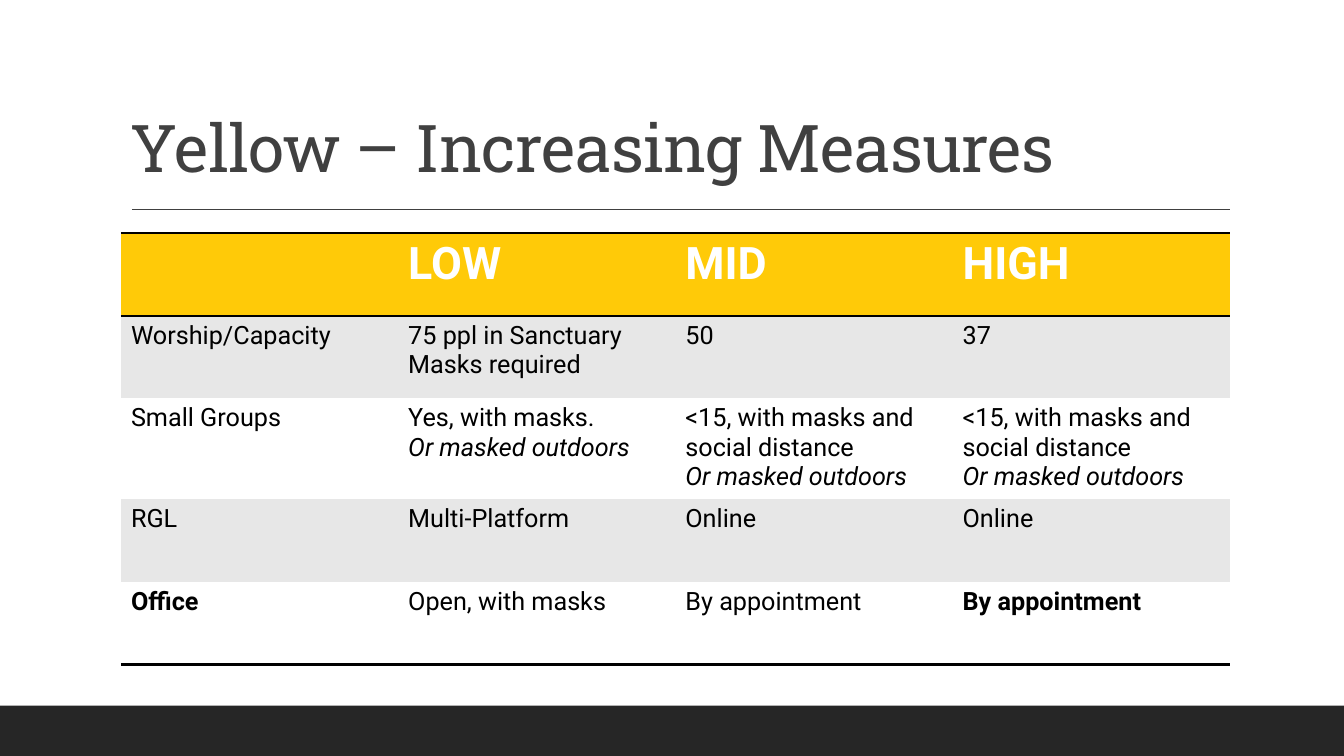
from dataclasses import dataclass

from lxml.etree import SubElement
from pptx import Presentation
from pptx.dml.color import RGBColor
from pptx.enum.shapes import MSO_CONNECTOR, MSO_SHAPE
from pptx.enum.text import MSO_ANCHOR
from pptx.oxml.ns import qn
from pptx.util import Pt


@dataclass(frozen=True)
class Theme:
    heading_font: str = "Roboto Slab"
    body_font: str = "Roboto"
    title_size: float = 47
    header_size: float = 32
    body_size: float = 18
    grey: str = "404040"
    footer: str = "262626"
    yellow: str = "FFCA08"
    band: str = "E7E7E7"
    white: str = "FFFFFF"
    black: str = "000000"


THEME = Theme()
SLIDE_WIDTH, SLIDE_HEIGHT = 960, 540
TABLE_LEFT, TABLE_TOP = 86.4, 166.5
COLUMN_WIDTH, ROW_HEIGHT = 198, 59.04
RULE_WIDTH = 2

OUTDOORS = "Or masked outdoors"
DISTANCED = f"<15, with masks and social distance\n{OUTDOORS}"
MEASURES = [
    ["", "LOW", "MID", "HIGH"],
    ["Worship/Capacity", "75 ppl in Sanctuary\nMasks required", "50", "37"],
    ["Small Groups", f"Yes, with masks.\n{OUTDOORS}", DISTANCED, DISTANCED],
    ["RGL", "Multi-Platform", "Online", "Online"],
    ["Office", "Open, with masks", "By appointment", "By appointment"],
]
BOLD_BODY_CELLS = {(4, 0), (4, 3)}


def style_font(font, name, size, color, bold=False, italic=False):
    font.name = name
    font.size = Pt(size)
    font.color.rgb = RGBColor.from_string(color)
    font.bold = bold
    font.italic = italic


def add_footer_bar(slide):
    height = 36
    bar = slide.shapes.add_shape(MSO_SHAPE.RECTANGLE, 0, Pt(SLIDE_HEIGHT - height),
                                 Pt(SLIDE_WIDTH), Pt(height))
    bar.shadow.inherit = False
    bar.fill.solid()
    bar.fill.fore_color.rgb = RGBColor.from_string(THEME.footer)
    bar.line.fill.background()


def add_title_rule(slide):
    rule = slide.shapes.add_connector(MSO_CONNECTOR.STRAIGHT, Pt(94.3), Pt(149.6),
                                      Pt(878.8), Pt(149.6))
    rule.line.color.rgb = RGBColor.from_string(THEME.grey)
    rule.line.width = Pt(1)
    SubElement(rule._element.spPr, qn("a:effectLst"))


def add_title(slide, wording):
    frame = slide.shapes.add_textbox(Pt(TABLE_LEFT), Pt(22.3), Pt(792), Pt(114.5)).text_frame
    frame.word_wrap = True
    frame.vertical_anchor = MSO_ANCHOR.BOTTOM
    title = frame.paragraphs[0]
    title.line_spacing = 0.9
    run = title.add_run()
    run.text = wording
    run._r.get_or_add_rPr().set("spc", "-50")
    style_font(title.font, THEME.heading_font, THEME.title_size, THEME.grey)


def set_borders(cell, ruled_edges):
    """Draw a black rule on the edges named and clear the other ones."""
    properties = cell._tc.get_or_add_tcPr()
    for edge in "LRTB":
        border = SubElement(properties, qn(f"a:ln{edge}"))
        if edge in ruled_edges:
            border.set("w", str(Pt(RULE_WIDTH)))
            fill = SubElement(border, qn("a:solidFill"))
            SubElement(fill, qn("a:srgbClr")).set("val", THEME.black)
        else:
            SubElement(border, qn("a:noFill"))


def fill_cell(cell, wording, background, size, color, bold):
    cell.fill.solid()
    cell.fill.fore_color.rgb = RGBColor.from_string(background)
    cell.text = wording
    for paragraph in cell.text_frame.paragraphs:
        style_font(paragraph.font, THEME.body_font, size, color, bold,
                   italic=paragraph.text == OUTDOORS)


def add_measures_table(slide):
    row_count, column_count = len(MEASURES), len(MEASURES[0])
    table = slide.shapes.add_table(row_count, column_count, Pt(TABLE_LEFT), Pt(TABLE_TOP),
                                   Pt(COLUMN_WIDTH * column_count),
                                   Pt(ROW_HEIGHT * row_count)).table
    table.first_row = False
    table.horz_banding = False
    ruled_edges = {0: "TB", 1: "T", row_count - 1: "B"}
    for row_index, measures in enumerate(MEASURES):
        is_header = row_index == 0
        if is_header:
            background, size, color = THEME.yellow, THEME.header_size, THEME.white
        else:
            background = THEME.band if row_index % 2 else THEME.white
            size, color = THEME.body_size, THEME.black
        for column_index, wording in enumerate(measures):
            cell = table.cell(row_index, column_index)
            bold = is_header or (row_index, column_index) in BOLD_BODY_CELLS
            set_borders(cell, ruled_edges.get(row_index, ""))
            fill_cell(cell, wording, background, size, color, bold)


def main():
    presentation = Presentation()
    presentation.slide_width = Pt(SLIDE_WIDTH)
    presentation.slide_height = Pt(SLIDE_HEIGHT)
    slide = presentation.slides.add_slide(presentation.slide_layouts[6])
    add_footer_bar(slide)
    add_title_rule(slide)
    add_title(slide, "Yellow – Increasing Measures")
    add_measures_table(slide)
    presentation.save("out.pptx")


if __name__ == "__main__":
    main()
